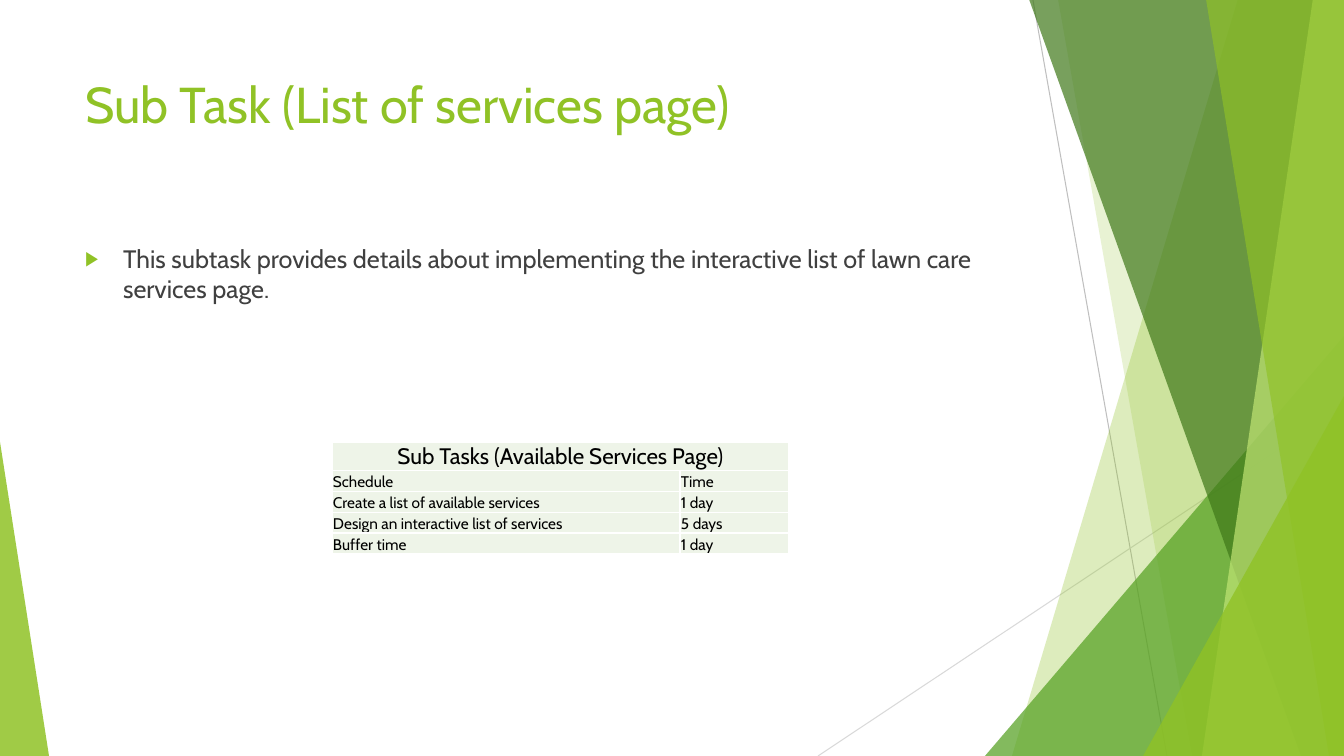
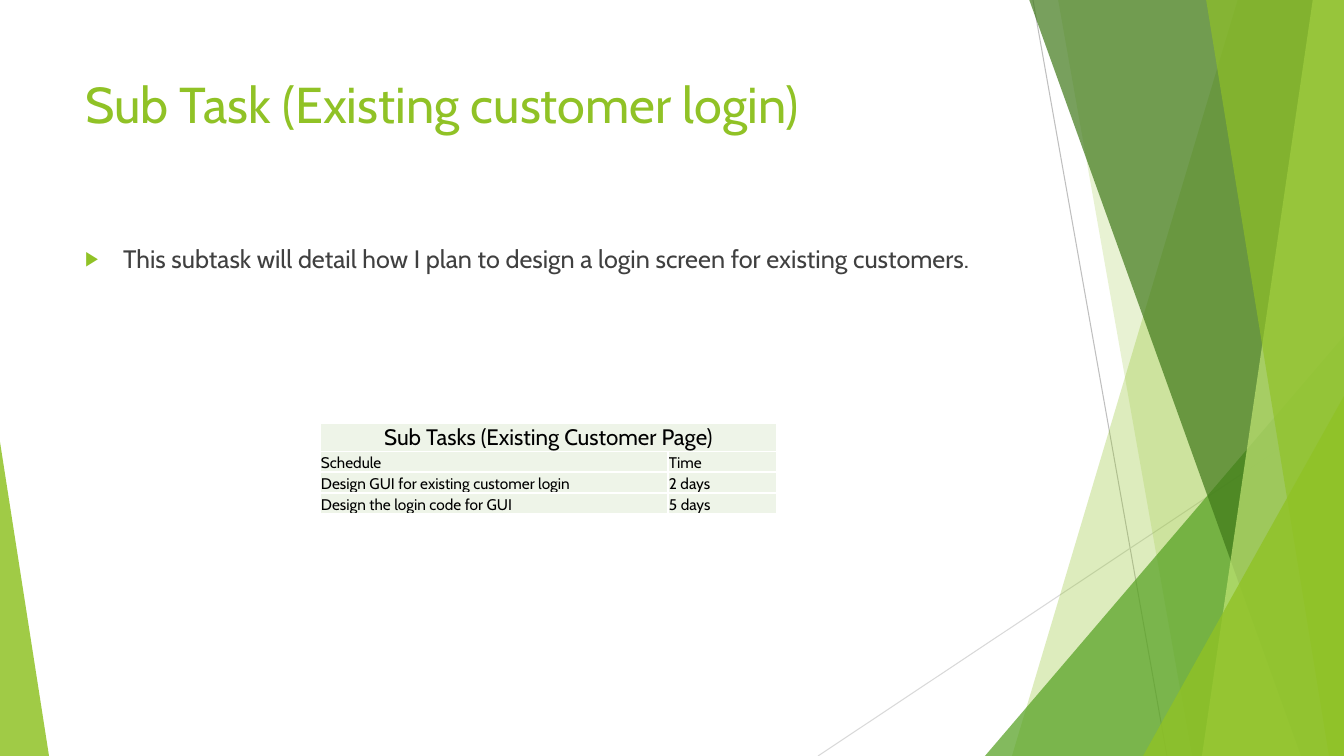
from pptx import Presentation
from pptx.dml.color import RGBColor
from pptx.enum.shapes import MSO_CONNECTOR, MSO_SHAPE
from pptx.enum.text import MSO_ANCHOR as ANCHOR, MSO_AUTO_SIZE as AUTO_SIZE, PP_ALIGN as ALIGN
from pptx.oxml.ns import qn
from pptx.util import Pt
from lxml.etree import SubElement

SCALE = 914400 / 100.8
WIDTH, HEIGHT = 1344, 756
FONT = "Cabin"
LIME, GREEN, FOREST, PALE = "90C226", "54A021", "3F7819", "C0E474"
BODY_TEXT, CELL_FILL = "404040", "EEF4E8"
COLUMNS, HEADER_HEIGHT, ROW_HEIGHT = (348, 109), 28, 21

SLIDES = [
    ("Sub Task (List of services page)",
     "This subtask provides details about implementing the interactive list of lawn care services page.",
     (332, 442),
     [("Sub Tasks (Available Services Page)", ""),
      ("Schedule", "Time"),
      ("Create a list of available services", "1 day"),
      ("Design an interactive list of services", "5 days"),
      ("Buffer time", "1 day")]),
    ("Sub Task (Existing customer login)",
     "This subtask will detail how I plan to design a login screen for existing customers.",
     (320, 423),
     [("Sub Tasks (Existing Customer Page)", ""),
      ("Schedule", "Time"),
      ("Design GUI for existing customer login", "2 days"),
      ("Design the login code for GUI", "5 days")]),
]


def px(*lengths):
    return [round(length * SCALE) for length in lengths]


def add_text(paragraph, text, size, color):
    run = paragraph.add_run()
    run.text = text
    run.font.name = FONT
    run.font.size = Pt(size)
    run.font.color.rgb = RGBColor.from_string(color)


presentation = Presentation()
presentation.slide_width, presentation.slide_height = px(WIDTH, HEIGHT)
layout = presentation.slide_layouts[1]

# Title and body places, shared through the layout
for placeholder, box in zip(layout.placeholders, [(75, 68, 948, 145), (75, 238, 948, 427)]):
    placeholder.left, placeholder.top, placeholder.width, placeholder.height = px(*box)
slides = [presentation.slides.add_slide(layout) for _ in SLIDES]

# Thin lines of the background
canvas = slides[0].shapes
decorations = []
for ends, color in [((1033, 0, 1167, 756), "BFBFBF"), ((1344, 406, 818, 756), "D9D9D9")]:
    line = canvas.add_connector(MSO_CONNECTOR.STRAIGHT, *px(*ends))
    line.line.color.rgb = RGBColor.from_string(color)
    line.line.width = Pt(0.75)
    SubElement(line._element.spPr, qn("a:effectLst"))
    decorations.append(line)

# Translucent facets: bands give (top x, bottom x), triangles give (box, apex)
facets = [
    ("band", (1238, 1012), LIME, 30),
    ("band", (1058, 1192), LIME, 20),
    ("triangle", ((985, 336, 359, 420), 1), GREEN, 72),
    ("band", (1029, 1301), FOREST, 70),
    ("band", (1313, 1202), PALE, 70),
    ("band", (1206, 1329), LIME, 65),
    ("triangle", ((1143, 396, 201, 360), 1), LIME, 80),
    ("triangle", ((0, 442, 49, 314), 0), LIME, 85),
]
for kind, geometry, color, opacity in facets:
    if kind == "band":
        top_x, bottom_x = geometry
        outline = canvas.build_freeform(*px(top_x, -1))
        outline.add_line_segments(
            [px(WIDTH, -1), px(WIDTH, HEIGHT), px(bottom_x, HEIGHT)], close=True)
        facet = outline.convert_to_shape()
    else:
        box, apex = geometry
        facet = canvas.add_shape(MSO_SHAPE.ISOSCELES_TRIANGLE, *px(*box))
        facet.adjustments[0] = apex
    facet.shadow.inherit = False
    facet.line.fill.background()
    facet.fill.solid()
    facet.fill.fore_color.rgb = RGBColor.from_string(color)
    fill_color = facet._element.spPr.find(".//" + qn("a:srgbClr"))
    SubElement(fill_color, qn("a:alpha"), val=str(opacity * 1000))
    decorations.append(facet)

# The background belongs to the layout, so every slide shows it
for number, decoration in enumerate(decorations, 101):
    decoration._element.find(".//" + qn("p:cNvPr")).set("id", str(number))
    layout.shapes._spTree.append(decoration._element)

for slide, (title, description, table_place, rows) in zip(slides, SLIDES):
    # Title and bullet
    title_shape, body_shape = slide.placeholders
    for shape, text, size, color in [(title_shape, title, 36, LIME),
                                     (body_shape, description, 18, BODY_TEXT)]:
        frame = shape.text_frame
        frame.word_wrap = True
        frame.auto_size = AUTO_SIZE.NONE
        frame.vertical_anchor = ANCHOR.TOP
        paragraph = frame.paragraphs[0]
        paragraph.alignment = ALIGN.LEFT
        add_text(paragraph, text, size, color)
    paragraph.space_before = Pt(10)
    indent = px(38)[0]
    properties = paragraph._p.get_or_add_pPr()
    properties.set("marL", str(indent))
    properties.set("indent", str(-indent))
    SubElement(SubElement(properties, qn("a:buClr")), qn("a:srgbClr"), val=LIME)
    SubElement(properties, qn("a:buSzPct"), val="80000")
    SubElement(properties, qn("a:buFont"), typeface="Arial")
    SubElement(properties, qn("a:buChar"), char="▶")

    # Schedule table
    heights = [HEADER_HEIGHT] + [ROW_HEIGHT] * (len(rows) - 1)
    table = slide.shapes.add_table(
        len(rows), len(COLUMNS), *px(*table_place, sum(COLUMNS), sum(heights))).table
    table.first_row = table.horz_banding = False
    for column, width in zip(table.columns, px(*COLUMNS)):
        column.width = width
    for row, height in zip(table.rows, px(*heights)):
        row.height = height
    table.cell(0, 0).merge(table.cell(0, 1))
    for row_index, row in enumerate(rows):
        for column_index, text in enumerate(row):
            cell = table.cell(row_index, column_index)
            cell.margin_left, cell.margin_right, cell.margin_top, cell.margin_bottom = px(1, 1, 1, 0)
            cell.vertical_anchor = ANCHOR.BOTTOM
            cell_properties = cell._tc.get_or_add_tcPr()
            for side in ("lnL", "lnR", "lnT", "lnB"):
                border = SubElement(cell_properties, qn("a:" + side), w=str(Pt(1)))
                SubElement(SubElement(border, qn("a:solidFill")), qn("a:srgbClr"), val="FFFFFF")
            cell.fill.solid()
            cell.fill.fore_color.rgb = RGBColor.from_string(CELL_FILL)
            # The fill has to follow the borders
            cell_properties.append(cell_properties.find(qn("a:solidFill")))
            if text:
                paragraph = cell.text_frame.paragraphs[0]
                paragraph.alignment = ALIGN.LEFT if row_index else ALIGN.CENTER
                add_text(paragraph, text, 11 if row_index else 16, "000000")

presentation.save("out.pptx")
